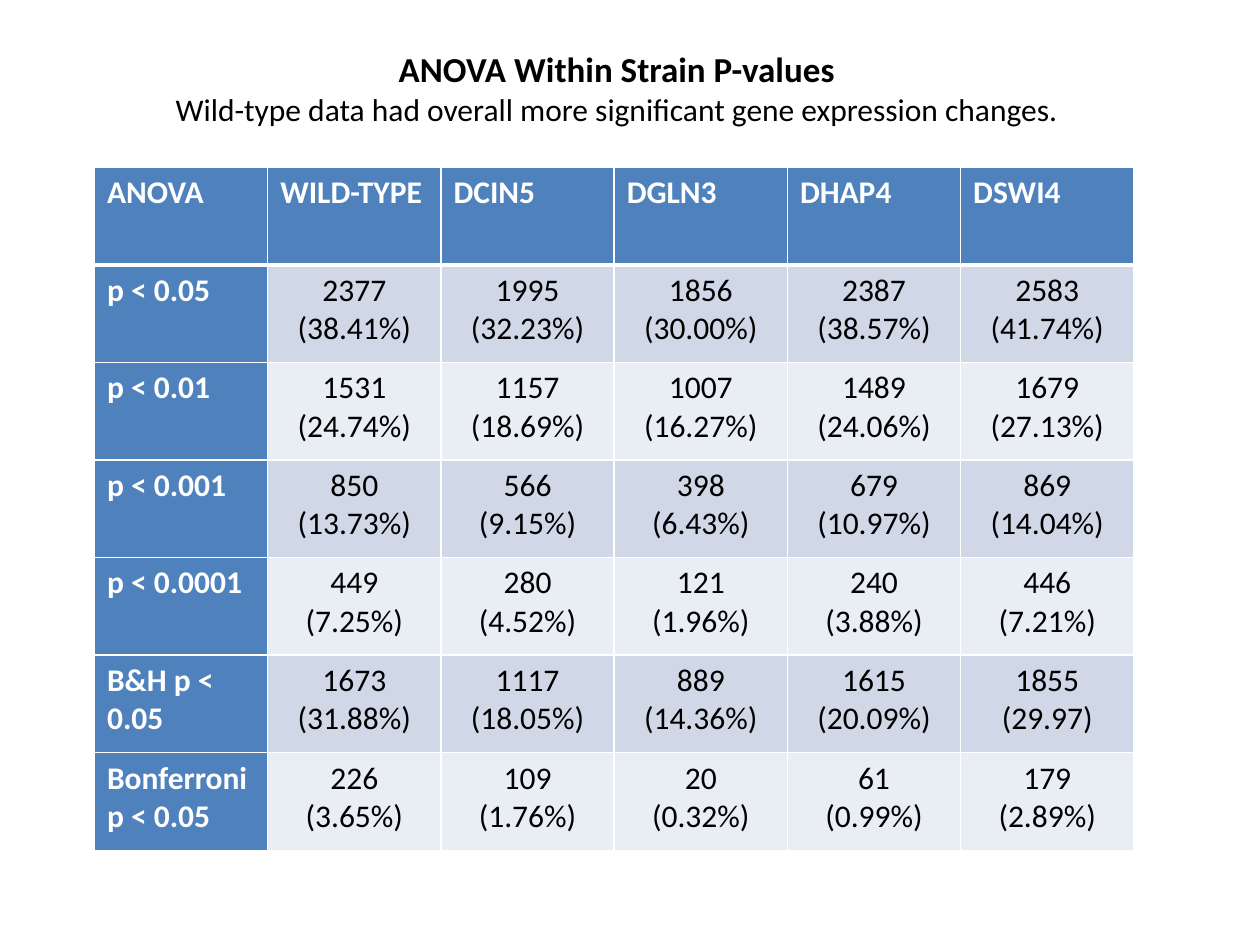
from lxml import etree
from pptx import Presentation
from pptx import util as u
from pptx.dml.color import RGBColor
from pptx.enum import text
from pptx.oxml.ns import qn

FONT = "Calibri"
COLORS = {"head": "4F81BD", "band": "D0D8E8", "plain": "E9EDF4",
          "white": "FFFFFF", "black": "000000"}
TITLE = "ANOVA Within Strain P-values"
SUBTITLE = "Wild-type data had overall more significant gene expression changes."
ROWS = [
    ["ANOVA", "WILD-TYPE", "DCIN5", "DGLN3", "DHAP4", "DSWI4"],
    ["p < 0.05", "2377 (38.41%)", "1995 (32.23%)", "1856 (30.00%)", "2387 (38.57%)", "2583 (41.74%)"],
    ["p < 0.01", "1531 (24.74%)", "1157 (18.69%)", "1007 (16.27%)", "1489 (24.06%)", "1679 (27.13%)"],
    ["p < 0.001", "850 (13.73%)", "566 (9.15%)", "398 (6.43%)", "679 (10.97%)", "869 (14.04%)"],
    ["p < 0.0001", "449 (7.25%)", "280 (4.52%)", "121 (1.96%)", "240 (3.88%)", "446 (7.21%)"],
    ["B&H p < 0.05", "1673 (31.88%)", "1117 (18.05%)", "889 (14.36%)", "1615 (20.09%)", "1855 (29.97)"],
    ["Bonferroni p < 0.05", "226 (3.65%)", "109 (1.76%)", "20\n(0.32%)", "61\n(0.99%)", "179 (2.89%)"],
]
LEFT, TOP, WIDTH, HEIGHT = 0.75, 1.33, 8.25, 5.42


def style(p, size, color, bold, align):
    p.alignment = align
    for r in p.runs:
        r.font.name = FONT
        r.font.size = u.Pt(size)
        r.font.bold = bold
        r.font.color.rgb = RGBColor.from_string(COLORS[color])


def set_borders(cell, widths):
    tcPr = cell._tc.get_or_add_tcPr()
    for side, width in widths.items():
        ln = etree.SubElement(tcPr, qn(f"a:ln{side}"), w=str(u.Pt(width)))
        fill = etree.SubElement(ln, qn("a:solidFill"))
        etree.SubElement(fill, qn("a:srgbClr"), val=COLORS["white"])


def add_heading(s):
    sp = s.shapes.add_textbox(u.Inches(0.52), u.Inches(0.33), u.Inches(8.75), u.Inches(0.74))
    tf = sp.text_frame
    tf.word_wrap = True
    tf.auto_size = text.MSO_AUTO_SIZE.SHAPE_TO_FIT_TEXT
    tf.text = f"{TITLE}\n{SUBTITLE}"
    for p, size, bold in zip(tf.paragraphs, (20, 18), (True, False)):
        style(p, size, "black", bold, text.PP_ALIGN.CENTER)


def add_anova_table(s):
    n_rows, n_cols = len(ROWS), len(ROWS[0])
    table = s.shapes.add_table(n_rows, n_cols, u.Inches(LEFT), u.Inches(TOP),
                               u.Inches(WIDTH), u.Inches(HEIGHT)).table
    table.first_col = True
    for col in table.columns:
        col.width = u.Inches(WIDTH / n_cols)
    for row in table.rows:
        row.height = u.Inches(HEIGHT / n_rows)
    for i, values in enumerate(ROWS):
        for j, value in enumerate(values):
            cell = table.cell(i, j)
            header = i == 0 or j == 0
            set_borders(cell, {"L": 1, "R": 1, "T": 3 if i == 1 else 1, "B": 3 if i == 0 else 1})
            fill = "head" if header else "band" if i % 2 else "plain"
            cell.fill.solid()
            cell.fill.fore_color.rgb = RGBColor.from_string(COLORS[fill])
            cell.text_frame.text = value
            for p in cell.text_frame.paragraphs:
                style(p, 18, "white" if header else "black", header,
                      text.PP_ALIGN.LEFT if header else text.PP_ALIGN.CENTER)


def main():
    prs = Presentation()
    prs.slide_width, prs.slide_height = u.Inches(10), u.Inches(7.5)
    s = prs.slides.add_slide(prs.slide_layouts[6])
    add_anova_table(s)
    add_heading(s)
    prs.save("out.pptx")


if __name__ == "__main__":
    main()
